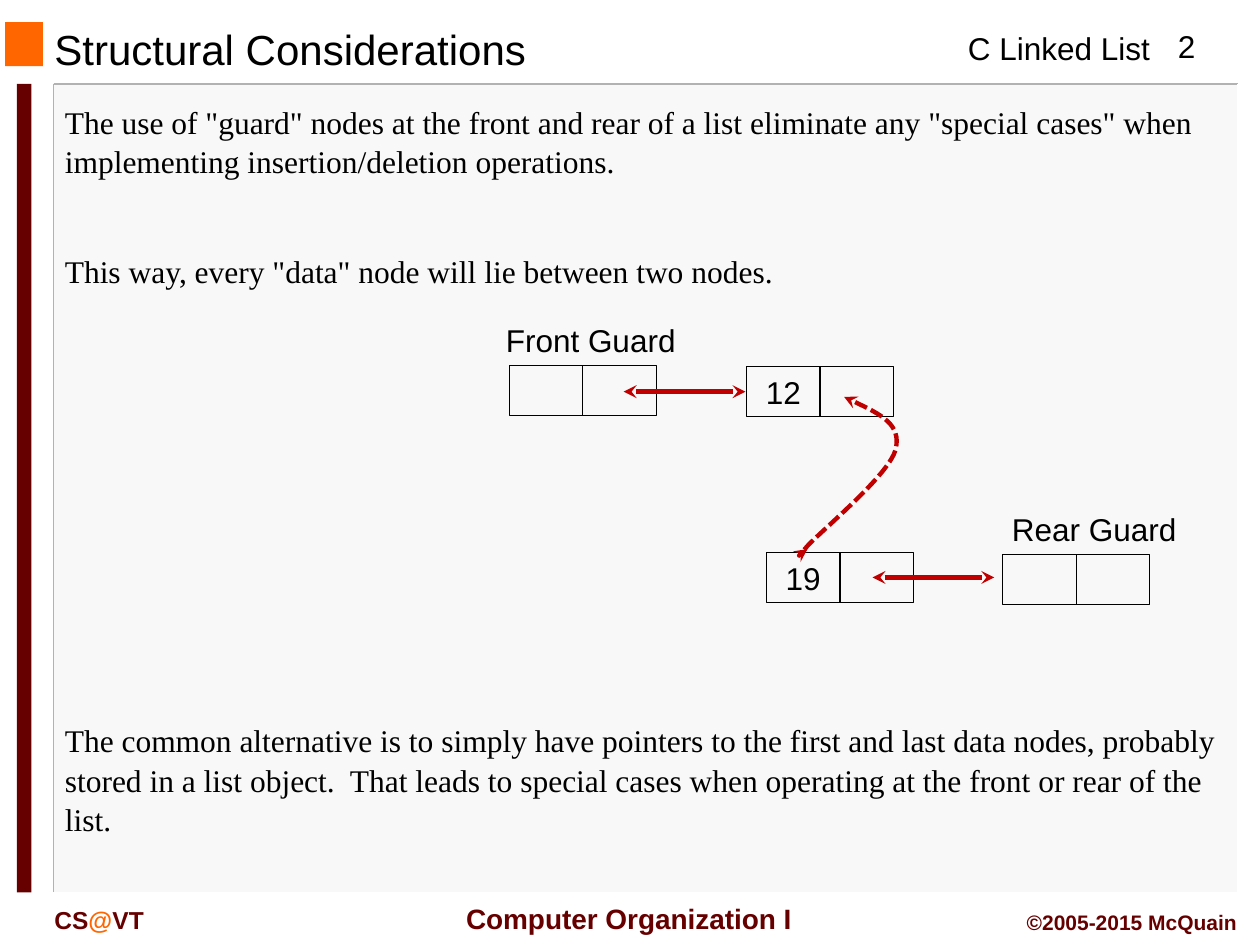
from lxml import etree
from pptx import Presentation, util as u
from pptx.dml.color import RGBColor
from pptx.enum import shapes, text
from pptx.oxml.ns import qn

COLS, ROWS = 120, 90          # grid units of 1/12 inch
CELL_W, CELL_H = 7, 4.8       # one half of a list node
BLACK, MAROON, ORANGE, RED = "000000", "660000", "FF6600", "C00000"


def rgb(value):
    return RGBColor.from_string(value)


class Deck:
    """Holds the style and the current slide."""
    sans, serif = "Arial", "Times New Roman"

    def __init__(self):
        self.prs = Presentation()
        self.prs.slide_width, self.prs.slide_height = u.Inches(10), u.Inches(7.5)
        self.s = self.prs.slides.add_slide(self.prs.slide_layouts[6])

    def x(self, col):
        return round(self.prs.slide_width * col / COLS)

    def y(self, row):
        return round(self.prs.slide_height * row / ROWS)

    def box(self, col, row, w, h):
        return self.x(col), self.y(row), self.x(w), self.y(h)

    def rect(self, at, fill=None, line=None):
        sp = self.s.shapes.add_shape(shapes.MSO_SHAPE.RECTANGLE, *self.box(*at))
        sp.shadow.inherit = False
        if fill:
            sp.fill.solid()
            sp.fill.fore_color.rgb = rgb(fill)
        else:
            sp.fill.background()
        if line:
            sp.line.color.rgb, sp.line.width = rgb(line), u.Pt(0.75)
        else:
            sp.line.fill.background()
        return sp

    def set_text(self, sp, paras, size=18, color=BLACK, font=None, bold=False,
                 align="LEFT", wrap=True, gap=0, spacing=None, anchor="TOP"):
        tf = sp.text_frame
        tf.word_wrap = wrap
        tf.vertical_anchor = text.MSO_ANCHOR[anchor]
        for i, runs in enumerate(paras):
            p = tf.add_paragraph() if i else tf.paragraphs[0]
            p.alignment = text.PP_ALIGN[align]
            p.line_spacing = spacing
            if i:
                p.space_before = u.Pt(gap)
            for words, tint in runs if isinstance(runs, list) else [(runs, color)]:
                r = p.add_run()
                r.text = words
                r.font.name, r.font.size, r.font.bold = font or self.sans, u.Pt(size), bold
                r.font.color.rgb = rgb(tint)

    def label(self, at, *paras, **style):
        self.set_text(self.s.shapes.add_textbox(*self.box(*at)), paras, **style)

    def body(self, at, *paras):
        self.label(at, *paras, font=self.serif, gap=40, spacing=1.05)

    def node(self, col, row, value=None):
        data = self.rect((col, row, CELL_W, CELL_H), line=BLACK)
        self.rect((col + CELL_W, row, CELL_W, CELL_H), line=BLACK)
        if value:
            self.set_text(data, [value], align="CENTER", anchor="MIDDLE")

    def line(self, start, end, color, width=1.0):
        c = self.s.shapes.add_connector(
            shapes.MSO_CONNECTOR.STRAIGHT, self.x(start[0]), self.y(start[1]),
            self.x(end[0]), self.y(end[1]))
        c.line.color.rgb, c.line.width = rgb(color), u.Pt(width)
        etree.SubElement(c._element.spPr, qn("a:effectLst"))
        return c

    def heads(self, sp, dash=None):
        ln = sp._element.spPr.find(qn("a:ln"))
        if dash:
            etree.SubElement(ln, qn("a:prstDash"), val=dash)
        for end in ("a:headEnd", "a:tailEnd"):
            etree.SubElement(ln, qn(end), type="stealth")

    def link(self, col, row, length):
        self.heads(self.line((col, row), (col + length, row), RED, 2.5))

    def curve(self, points):
        """Draw Bezier pieces: a start, then three points for each piece."""
        pts = [(self.x(c), self.y(r)) for c, r in points]
        fb = self.s.shapes.build_freeform(*pts[0])
        fb.add_line_segments(pts[1:], close=False)
        sp = fb.convert_to_shape()
        sp.shadow.inherit = False
        sp.fill.background()
        sp.line.color.rgb, sp.line.width = rgb(RED), u.Pt(2.5)
        self.heads(sp, "sysDash")
        outline = next(sp._element.iter(qn("a:path")))
        steps = outline.findall(qn("a:lnTo"))
        for i in range(0, len(steps), 3):
            bez = etree.SubElement(outline, qn("a:cubicBezTo"))
            for step in steps[i:i + 3]:
                bez.append(step[0])
                outline.remove(step)


def main():
    d = Deck()

    # Panel with bevelled edges, and side marks
    left, top, right, bottom = 5.1, 8, 117.9, 85
    d.rect((left, top, right - left, bottom - top), fill="F8F8F8")
    for corner, color in (((left, top), "B2B2B2"), ((right, bottom), "FFFFFF")):
        d.line((left, corner[1]), (right, corner[1]), color)
        d.line((corner[0], top), (corner[0], bottom), color)
    d.rect((0.5, 2.1, 3.6, 4.2), fill=ORANGE)
    d.rect((1.6, top, 1.4, bottom - top), fill=MAROON)

    # Header and footer
    d.label((4, 2.3, 76, 4.6), "Structural Considerations", size=24, anchor="MIDDLE")
    d.label((91, 2.2, 19.9, 4.8), "C Linked List", wrap=False)
    d.label((109, 2, 8, 4.8), "2", align="CENTER")
    d.label((42.4, 85.3, 35, 4.4), "Computer Organization I", size=16, color=MAROON,
            bold=True, align="CENTER", anchor="MIDDLE")
    d.label((4, 85.6, 18, 4), [("CS", MAROON), ("@", ORANGE), ("VT", MAROON)],
            size=14, bold=True)
    d.label((94, 86, 25, 3.6), "©2005-2015 McQuain", size=12, color=MAROON,
            bold=True, align="RIGHT")

    # Linked list
    d.node(48.5, 34.8)
    d.label((47, 30, 19, 4.8), "Front Guard")
    d.node(71.1, 34.9, "12")
    d.node(73, 52.6, "19")
    d.node(95.5, 52.8)
    d.label((95.2, 48, 19, 4.8), "Rear Guard")
    d.link(59.4, 37.3, 11.6)
    d.link(83.1, 55, 11.6)
    d.curve([(80.4, 37.8), (83.2, 39.1), (85.9, 40.4), (85.3, 42.8),
             (84.7, 45.2), (78.4, 50.4), (76.9, 52),
             (75.6, 53.5), (76.2, 52.9), (76.9, 52.3)])

    # Explanation
    d.body((5, 9, 113, 19.4),
           'The use of "guard" nodes at the front and rear of a list eliminate any '
           '"special cases" when implementing insertion/deletion operations.',
           'This way, every "data" node will lie between two nodes.')
    d.body((5, 67.9, 113, 12.1),
           "The common alternative is to simply have pointers to the first and last "
           "data nodes, probably stored in a list object.  That leads to special cases "
           "when operating at the front or rear of the list.")

    d.prs.save("out.pptx")


if __name__ == "__main__":
    main()
